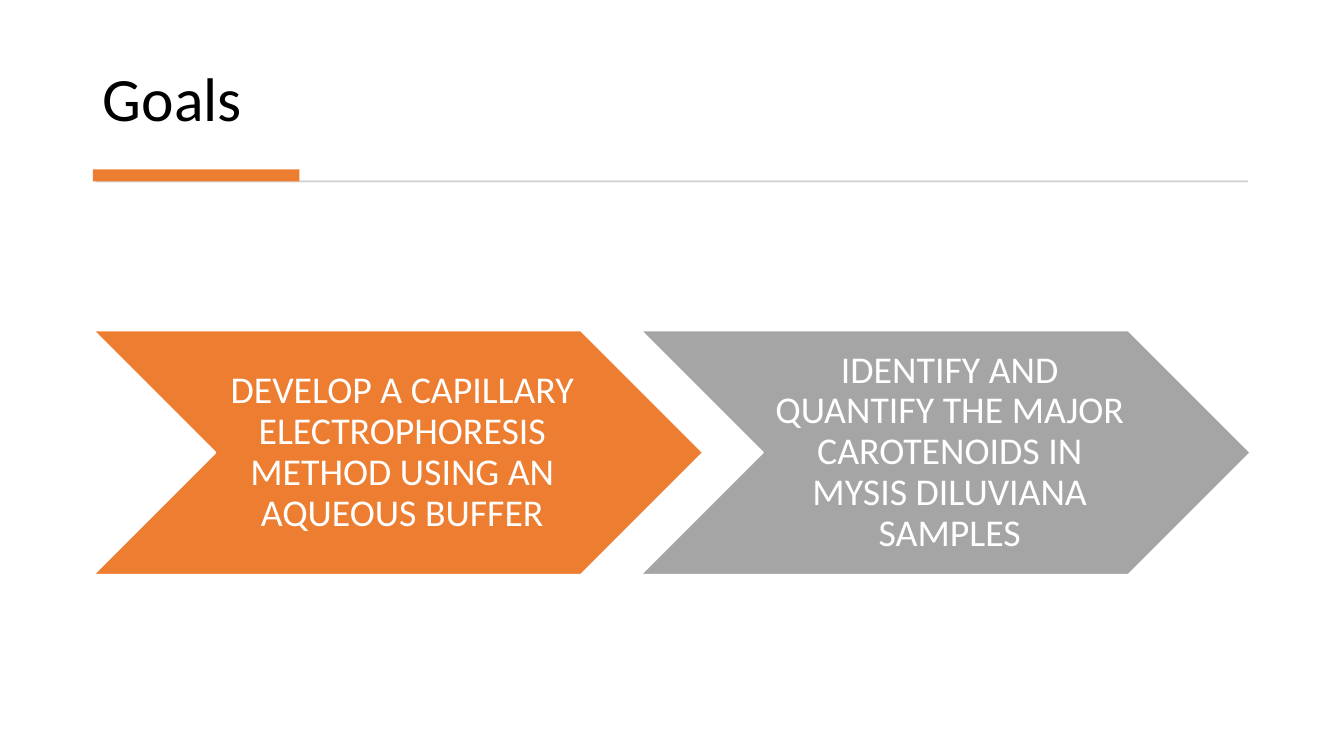
from pptx import Presentation
from pptx.dml.color import RGBColor
from pptx.enum.shapes import MSO_SHAPE
from pptx.enum.text import MSO_ANCHOR, PP_ALIGN
from pptx.util import Inches, Pt

FONT = "Calibri"
ORANGE, GRAY, RULE, WHITE, BLACK = "ED7D31", "A5A5A5", "D5D5D5", "FFFFFF", "000000"

GOALS = [
    ("DEVELOP A CAPILLARY ELECTROPHORESIS METHOD USING AN AQUEOUS BUFFER", ORANGE),
    ("IDENTIFY AND QUANTIFY THE MAJOR CAROTENOIDS IN MYSIS DILUVIANA SAMPLES", GRAY),
]
GOAL_LEFT, GOAL_STEP = 0.93, 5.43


def rgb(color):
    return RGBColor.from_string(color)


def set_text(tf, text, size, color, align, anchor):
    tf.text = text
    tf.word_wrap = True
    tf.vertical_anchor = anchor
    p = tf.paragraphs[0]
    p.alignment = align
    p.line_spacing = 0.9
    font = p.runs[0].font
    font.name, font.size = FONT, Pt(size)
    font.color.rgb = rgb(color)


def add_title(s, text):
    title = s.shapes.title
    title.left, title.top = Inches(0.92), Inches(0.28)
    title.width, title.height = Inches(11.49), Inches(1.11)
    set_text(title.text_frame, text, 44, BLACK, PP_ALIGN.LEFT, MSO_ANCHOR.BOTTOM)


def add_filled(s, kind, left, top, width, height, fill):
    sp = s.shapes.add_shape(kind, Inches(left), Inches(top), Inches(width), Inches(height))
    sp.shadow.inherit = False
    sp.fill.solid()
    sp.fill.fore_color.rgb = rgb(fill)
    sp.line.fill.background()
    return sp


def add_goal(s, left, text, fill):
    sp = add_filled(s, MSO_SHAPE.CHEVRON, left, 3.28, 6.04, 2.42, fill)
    sp.line.color.rgb = rgb(WHITE)
    sp.line.width = Pt(1)
    tf = sp.text_frame
    tf.margin_left = Inches(0.12)
    tf.margin_top = tf.margin_right = tf.margin_bottom = Inches(0.04)
    set_text(tf, text, 27, WHITE, PP_ALIGN.CENTER, MSO_ANCHOR.MIDDLE)


def main():
    prs = Presentation()
    prs.slide_width, prs.slide_height = Inches(13.33), Inches(7.5)
    s = prs.slides.add_slide(prs.slide_layouts[5])

    # Title with its rule and accent bar
    add_title(s, "Goals")
    add_filled(s, MSO_SHAPE.RECTANGLE, 0.95, 1.79, 11.43, 0.02, RULE)
    add_filled(s, MSO_SHAPE.RECTANGLE, 0.92, 1.68, 2.05, 0.12, ORANGE)

    # Goal chevrons
    for i, (text, fill) in enumerate(GOALS):
        add_goal(s, GOAL_LEFT + i * GOAL_STEP, text, fill)

    prs.save("out.pptx")


if __name__ == "__main__":
    main()
